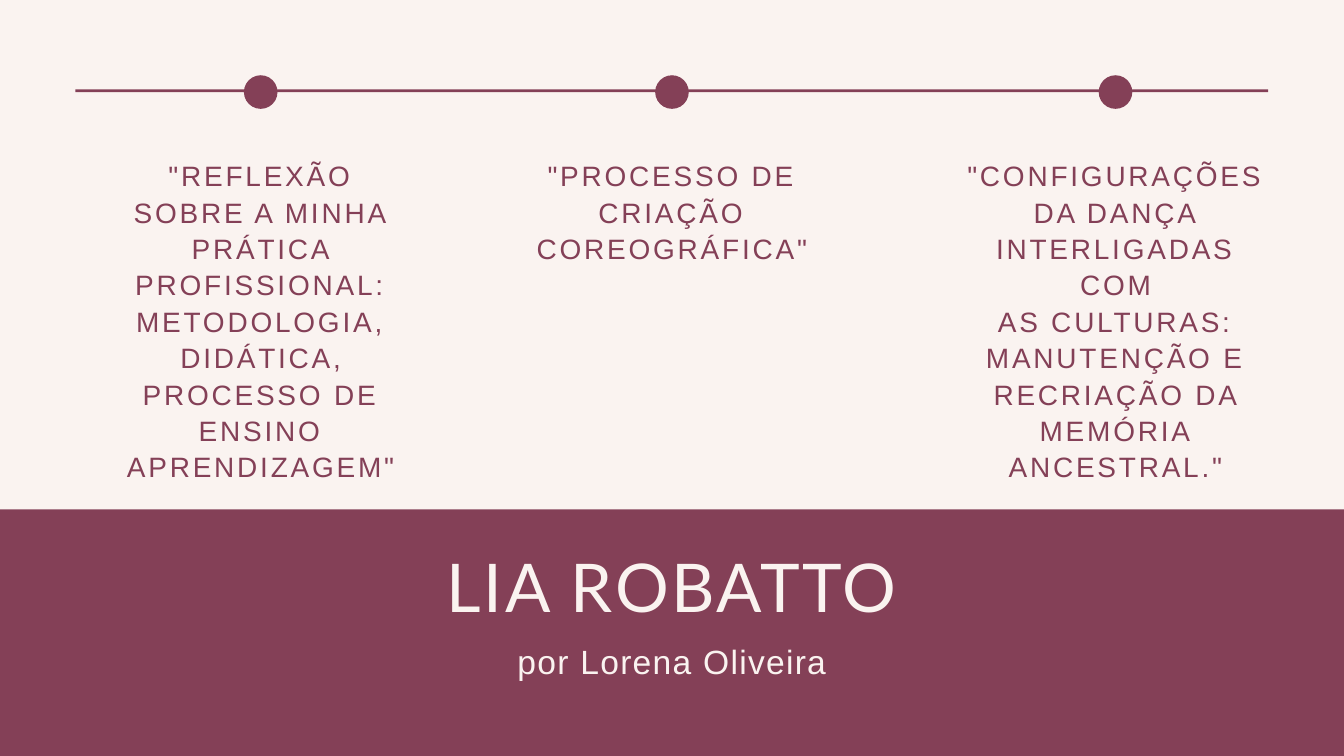
from dataclasses import dataclass

from pptx import Presentation
from pptx.dml.color import RGBColor as RGB
from pptx.enum.shapes import MSO_SHAPE as Shape
from pptx.enum.text import PP_ALIGN as Align
from pptx.util import Inches, Pt


@dataclass(frozen=True)
class Theme:
    wine: RGB = RGB(0x84, 0x40, 0x57)
    cream: RGB = RGB(0xFA, 0xF3, 0xF0)
    title: int = 72
    author: int = 36
    topic: int = 30


theme = Theme()
prs = Presentation()
prs.slide_width, prs.slide_height = Inches(20), Inches(11.25)
slide = prs.slides.add_slide(prs.slide_layouts[6])
back = slide.background.fill
back.solid()
back.fore_color.rgb = theme.wine


def add_solid(kind, box, color):
    shape = slide.shapes.add_shape(kind, *map(Inches, box))
    shape.shadow.inherit = False
    shape.fill.solid()
    shape.fill.fore_color.rgb = color
    shape.line.fill.background()


def add_text(box, text, font, size, color, lead, track):
    """Add centred text; lead is line spacing and track letter spacing, in points."""
    frame = slide.shapes.add_textbox(*map(Inches, box)).text_frame
    frame.word_wrap = True
    frame.margin_left = frame.margin_right = 0
    frame.margin_top = frame.margin_bottom = 0
    frame.text = text
    for para in frame.paragraphs:
        para.alignment = Align.CENTER
        para.line_spacing = Pt(lead)
        for run in para.runs:
            run.font.name = font
            run.font.size = Pt(size)
            run.font.color.rgb = color
            run.font._element.set("spc", str(round(track * 100)))


# Upper panel and timeline
add_solid(Shape.RECTANGLE, (-0.27, -0.42, 20.54, 8), theme.cream)
add_solid(Shape.RECTANGLE, (1.12, 1.33, 17.75, 0.04), theme.wine)

# Name and author
add_text((4, 9.53, 12, 0.59), "por Lorena Oliveira", "Arial",
         theme.author, theme.cream, 43.2, 1.4)
add_text((2.97, 8.11, 14.06, 1.2), "LIA ROBATTO", "Lato",
         theme.title, theme.cream, 86.4, 2.9)

# Topics, each centred under its dot
topics = [
    (3.88, 4.32, '"REFLEXÃO SOBRE A MINHA PRÁTICA\n'
                 'PROFISSIONAL: METODOLOGIA, DIDÁTICA,\n'
                 'PROCESSO DE ENSINO APRENDIZAGEM"'),
    (10, 1.61, '"PROCESSO DE CRIAÇÃO COREOGRÁFICA"'),
    (16.6, 4.32, '"CONFIGURAÇÕES DA DANÇA INTERLIGADAS COM\n'
                 'AS CULTURAS: MANUTENÇÃO E RECRIAÇÃO DA\n'
                 'MEMÓRIA ANCESTRAL."'),
]
width, dot = 4.55, 0.5
for mid, height, text in topics:
    add_text((mid - width / 2, 2.32, width, height), text, "Arial",
             theme.topic, theme.wine, 39, 3)
    add_solid(Shape.OVAL, (mid - dot / 2, 1.12, dot, dot), theme.wine)

prs.save("out.pptx")
